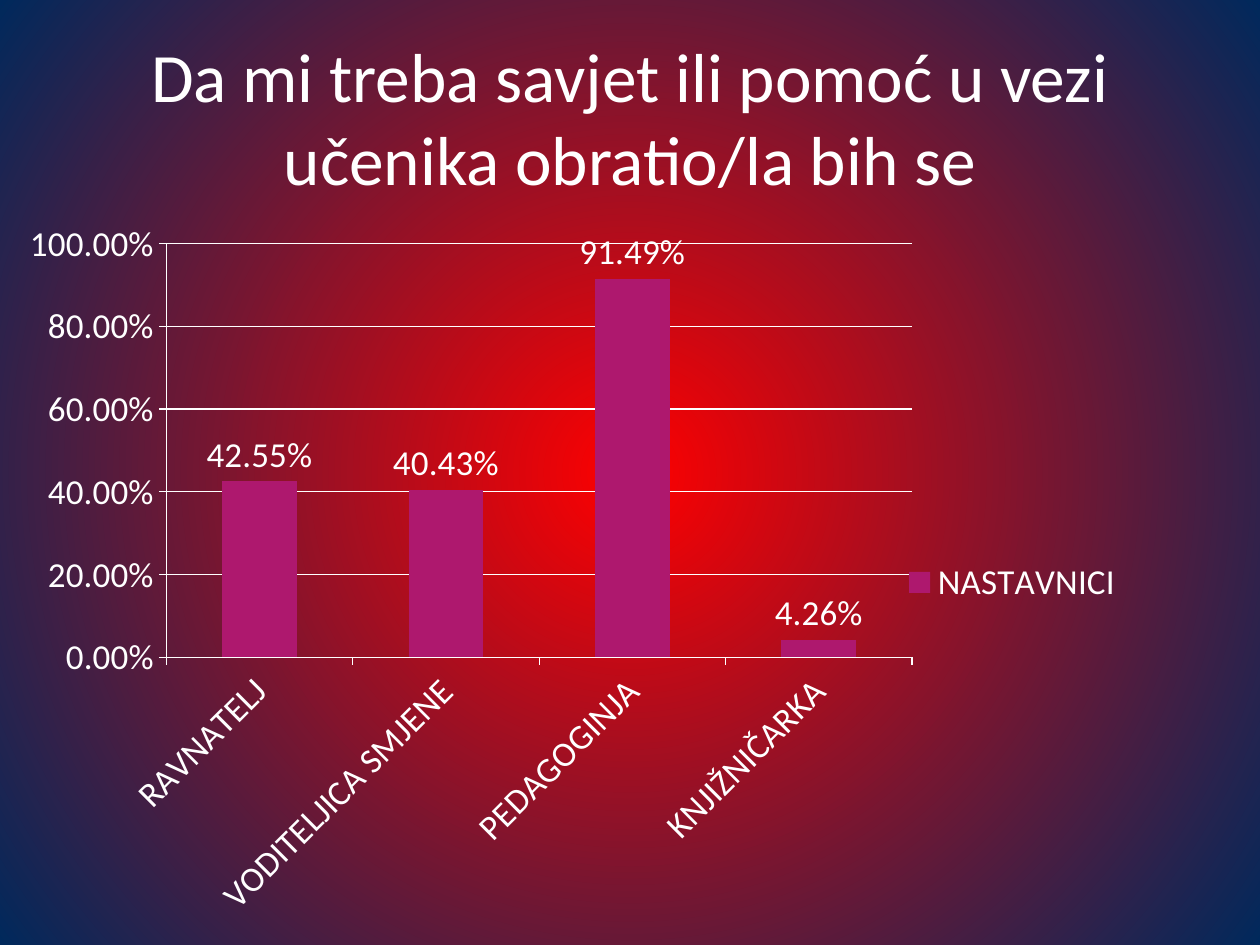
from dataclasses import dataclass

from lxml.etree import SubElement
from pptx import Presentation
from pptx.chart.data import CategoryChartData
from pptx.dml.color import RGBColor
from pptx.enum.chart import XL_CHART_TYPE, XL_LABEL_POSITION, XL_LEGEND_POSITION, XL_TICK_MARK
from pptx.enum.text import MSO_ANCHOR, PP_ALIGN
from pptx.oxml.ns import qn
from pptx.util import Pt


@dataclass(frozen=True)
class Theme:
    """Colours, typeface and type sizes of the deck."""
    font: str = "Calibri"
    text: RGBColor = RGBColor.from_string("FFFFFF")
    bar: RGBColor = RGBColor.from_string("AE186E")
    glow: RGBColor = RGBColor.from_string("FF0000")
    edge: RGBColor = RGBColor.from_string("00295C")
    title_size: float = 39.6
    chart_size: float = 20


@dataclass(frozen=True)
class Box:
    """A region of the page in points."""
    left: float
    top: float
    width: float
    height: float

    def lengths(self):
        """Return left, top, width and height as lengths."""
        return Pt(self.left), Pt(self.top), Pt(self.width), Pt(self.height)


THEME = Theme()
TITLE = "Da mi treba savjet ili pomoć u vezi učenika obratio/la bih se"
SERIES = "NASTAVNICI"
ANSWERS = {
    "RAVNATELJ": 0.4255,
    "VODITELJICA SMJENE": 0.4043,
    "PEDAGOGINJA": 0.9149,
    "KNJIŽNIČARKA": 0.0426,
}
PERCENT = "0.00%"


def style_font(font, size):
    """Apply the theme typeface and text colour."""
    font.name = THEME.font
    font.size = Pt(size)
    font.color.rgb = THEME.text


def paint_background(page):
    """Fill the page with a circular gradient from its centre."""
    fill = page.background.fill
    fill.gradient()
    for stop, position, color in zip(fill.gradient_stops, (0, 1), (THEME.glow, THEME.edge)):
        stop.position = position
        stop.color.rgb = color
    gradient = page.background._cSld.find(".//" + qn("a:gradFill"))
    linear = gradient.find(qn("a:lin"))
    circle = SubElement(gradient, qn("a:path"), path="circle")
    SubElement(circle, qn("a:fillToRect"), dict.fromkeys("ltrb", "50000"))
    gradient.replace(linear, circle)


def place_title(page, box):
    """Put the question into the title placeholder."""
    title = page.shapes.title
    title.left, title.top, title.width, title.height = box.lengths()
    frame = title.text_frame
    frame.text = TITLE
    frame.word_wrap = True
    frame.vertical_anchor = MSO_ANCHOR.MIDDLE
    para = frame.paragraphs[0]
    para.alignment = PP_ALIGN.CENTER
    style_font(para.font, THEME.title_size)


def set_layout(parent, index, **values):
    """Give a chart part a manual layout in fractions of the chart."""
    for old in parent.findall(qn("c:layout")):
        parent.remove(old)
    layout = parent.makeelement(qn("c:layout"))
    parent.insert(index, layout)
    manual = SubElement(layout, qn("c:manualLayout"))
    for name, value in values.items():
        SubElement(manual, qn(f"c:{name}"), val=str(value))


def format_axes(chart):
    """Style both axes, the gridlines and the slanted category names."""
    for axis in (chart.category_axis, chart.value_axis):
        axis.major_tick_mark = XL_TICK_MARK.OUTSIDE
        axis.minor_tick_mark = XL_TICK_MARK.NONE
        axis.format.line.color.rgb = THEME.text
        style_font(axis.tick_labels.font, THEME.chart_size)
    names = chart.category_axis._element.find(qn("c:txPr"))
    names.find(qn("a:bodyPr")).set("rot", "-2700000")
    values = chart.value_axis
    values.minimum_scale, values.maximum_scale, values.major_unit = 0, 1, 0.2
    values.has_major_gridlines = True
    values.major_gridlines.format.line.color.rgb = THEME.text
    values.tick_labels.number_format = PERCENT
    values.tick_labels.number_format_is_linked = False


def format_bars(plot):
    """Colour the bars and label them with their values."""
    plot.vary_by_categories = False
    plot.gap_width = 150
    fill = plot.series[0].format.fill
    fill.solid()
    fill.fore_color.rgb = THEME.bar
    labels = plot.series[0].data_labels
    labels.show_value = True
    labels.number_format = PERCENT
    labels.number_format_is_linked = False
    labels.position = XL_LABEL_POSITION.OUTSIDE_END
    style_font(labels.font, THEME.chart_size)


def place_chart(page, box):
    """Add the column chart of answers with its legend."""
    data = CategoryChartData(number_format=PERCENT)
    data.categories = list(ANSWERS)
    data.add_series(SERIES, list(ANSWERS.values()))
    chart = page.shapes.add_chart(XL_CHART_TYPE.COLUMN_CLUSTERED, *box.lengths(), data).chart
    chart.has_title = False
    style_font(chart.font, THEME.chart_size)
    format_axes(chart)
    format_bars(chart.plots[0])
    chart.has_legend = True
    legend = chart.legend
    legend.position = XL_LEGEND_POSITION.RIGHT
    legend.include_in_layout = False
    style_font(legend.font, THEME.chart_size)
    set_layout(legend._element, 1, xMode="edge", yMode="edge", x=0.75, y=0.46)
    plot_area = chart._chartSpace.find(".//" + qn("c:plotArea"))
    set_layout(plot_area, 0, layoutTarget="inner", xMode="edge", yMode="edge",
               x=0.139, y=0.032, w=0.623, h=0.571)


def main():
    """Build and save the deck."""
    deck = Presentation()
    deck.slide_width, deck.slide_height = Pt(720), Pt(540)
    page = deck.slides.add_slide(deck.slide_layouts[5])
    paint_background(page)
    place_title(page, Box(36, 21.6, 648, 90))
    place_chart(page, Box(0, 126, 684, 414))
    deck.save("out.pptx")


if __name__ == "__main__":
    main()
